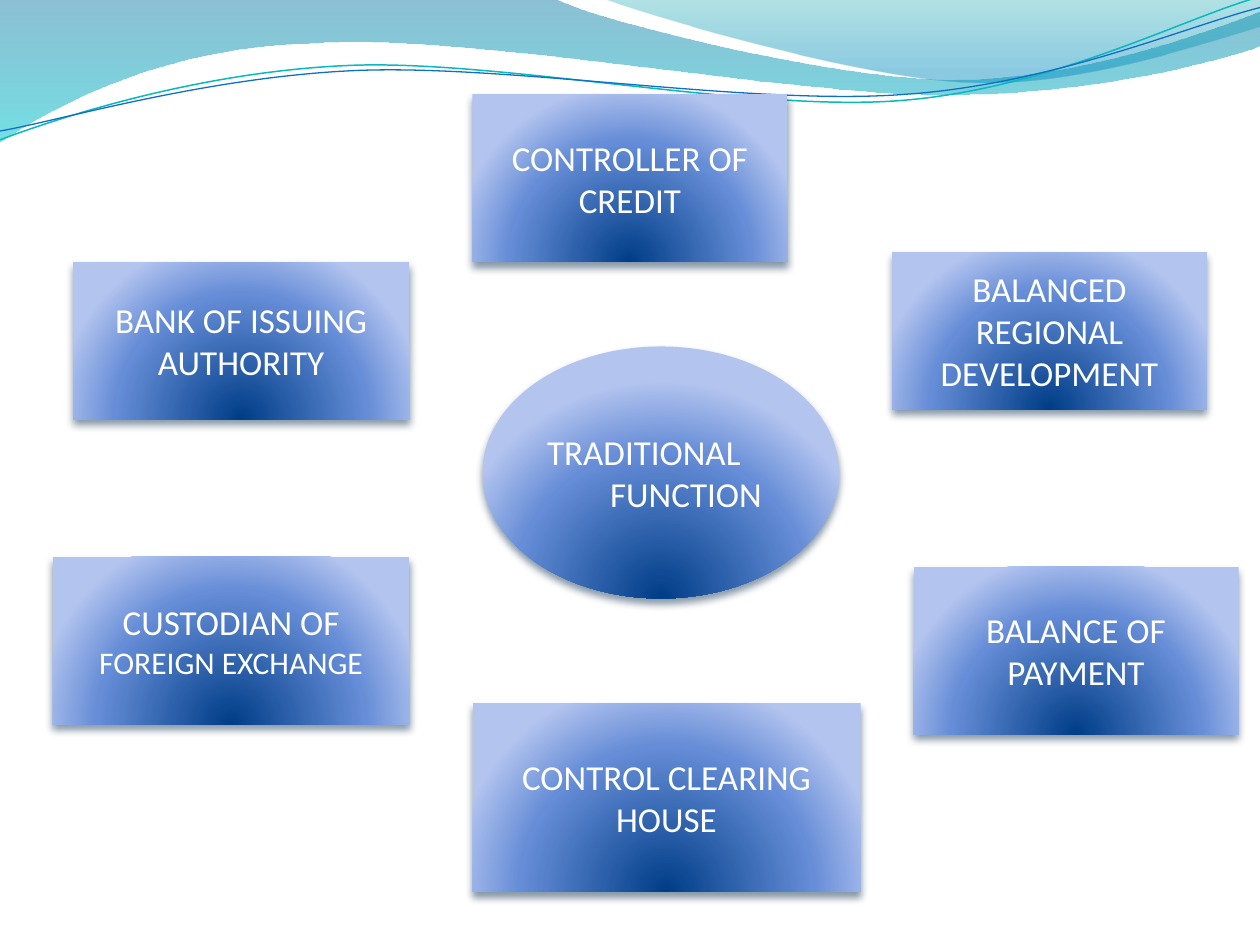
from dataclasses import dataclass

from lxml.etree import SubElement
from pptx import Presentation
from pptx.dml.color import RGBColor
from pptx.enum.shapes import MSO_SHAPE
from pptx.enum.text import MSO_ANCHOR, PP_ALIGN
from pptx.oxml.ns import qn
from pptx.util import Inches, Pt


@dataclass(frozen=True)
class Theme:
    font: str = "Calibri"
    text: str = "FFFFFF"
    size: int = 20
    small_size: int = 18
    # Gradient stops: position, colour, opacity (positions and opacity in percent)
    box: tuple = ((0, "003D87", 100), (68, "668DD7", 100), (100, "B3C4EF", 100))
    wide_wave: tuple = ((0, "0074A1", 45), (100, "00C6CF", 55))
    corner_wave: tuple = ((0, "00A1A9", 30), (80, "008BBF", 45))
    teal_line: str = "0AB8BF"
    blue_line: str = "0F6FC6"
    shadow: str = "042747"


theme = Theme()


def set_gradient(shape, stops, radial=False):
    """Give the shape a radial gradient, or one running from top to bottom."""
    shape.fill.background()
    no_fill = shape.element.spPr.find(qn("a:noFill"))
    gradient = SubElement(shape.element.spPr, qn("a:gradFill"), rotWithShape="1")
    shape.element.spPr.replace(no_fill, gradient)
    stop_list = SubElement(gradient, qn("a:gsLst"))
    for position, color, opacity in stops:
        stop = SubElement(stop_list, qn("a:gs"), pos=str(position * 1000))
        color_element = SubElement(stop, qn("a:srgbClr"), val=color)
        if opacity < 100:
            SubElement(color_element, qn("a:alpha"), val=str(opacity * 1000))
    if radial:
        circle = SubElement(gradient, qn("a:path"), {"path": "circle"})
        SubElement(circle, qn("a:fillToRect"), l="50000", t="130000", r="50000", b="-30000")
    else:
        SubElement(gradient, qn("a:lin"), ang="5400000", scaled="1")


def add_curve(slide, start, segments, closed):
    """Draw segments of one point (line) or three points (Bezier curve)."""
    builder = slide.shapes.build_freeform(Inches(start[0]), Inches(start[1]))
    for segment in segments:
        points = zip(segment[::2], segment[1::2])
        builder.add_line_segments([(Inches(x), Inches(y)) for x, y in points], close=False)
    if closed:
        builder.add_line_segments([], close=True)
    shape = builder.convert_to_shape()
    shape.shadow.inherit = False
    # Merge each run of three line points into one Bezier curve
    outline = shape.element.find(".//" + qn("a:path"))
    steps = iter(outline.findall(qn("a:lnTo")))
    for segment in segments:
        run = [next(steps) for _ in segment[::2]]
        if len(run) == 3:
            curve = SubElement(outline, qn("a:cubicBezTo"))
            outline.replace(run[0], curve)
            for step in run:
                curve.append(step.find(qn("a:pt")))
            for step in run[1:]:
                outline.remove(step)
    return shape


presentation = Presentation()
presentation.slide_width = Inches(10)
presentation.slide_height = Inches(7.5)
slide = presentation.slides.add_slide(presentation.slide_layouts[6])

# Filled waves across the top
waves = [
    (theme.wide_wave, (0, 0), [
        (4.4, -0.01),
        (4.76, 0.17, 6.64, 0.63, 7.58, 0.63),
        (8.53, 0.63, 9.58, 0.26, 10, 0.09),
        (10.01, 0.36),
        (9.83, 0.44, 8.7, 0.76, 7.46, 0.75),
        (6.22, 0.75, 3.82, 0.28, 2.57, 0.34),
        (1.29, 0.36, 0.46, 0.83, -0.01, 1.13),
    ]),
    (theme.corner_wave, (4.79, -0.01), [
        (5.09, 0.11, 6.82, 0.62, 7.69, 0.65),
        (8.56, 0.69, 9.61, 0.32, 10, 0.21),
        (10, 0),
    ]),
]
for stops, start, segments in waves:
    wave = add_curve(slide, start, segments, closed=True)
    set_gradient(wave, stops)
    wave.line.fill.background()

# Thin wave lines
wave_lines = [
    (theme.teal_line, 0.85, (0, 1.11), [
        (0.48, 0.93, 1.58, 0.57, 2.77, 0.52),
        (3.95, 0.47, 5.93, 0.89, 7.13, 0.8),
        (8.33, 0.71, 9.38, 0.15, 9.98, -0.02),
    ]),
    (theme.blue_line, 0.75, (0, 1.04), [
        (0.47, 0.96, 1.64, 0.61, 2.83, 0.56),
        (4.03, 0.51, 5.97, 0.84, 7.17, 0.75),
        (8.36, 0.67, 9.41, 0.21, 10, 0.06),
    ]),
]
for color, width, start, segments in wave_lines:
    wave_line = add_curve(slide, start, segments, closed=False)
    wave_line.fill.background()
    wave_line.line.color.rgb = RGBColor.from_string(color)
    wave_line.line.width = Pt(width)

# Central ellipse and the functions around it: text, left, top, width, height
functions = [
    ("TRADITIONAL\nFUNCTION", 3.83, 2.75, 2.83, 2),
    ("CONTROLLER OF CREDIT", 3.75, 0.75, 2.5, 1.33),
    ("BALANCED REGIONAL DEVELOPMENT", 7.08, 2, 2.5, 1.25),
    ("BALANCE OF PAYMENT", 7.25, 4.5, 2.58, 1.33),
    ("CUSTODIAN OF", 0.42, 4.42, 2.83, 1.33),
    ("BANK OF ISSUING AUTHORITY", 0.58, 2.08, 2.67, 1.25),
    ("CONTROL CLEARING HOUSE", 3.75, 5.58, 3.08, 1.5),
]
shapes = {}
for text, left, top, width, height in functions:
    kind = MSO_SHAPE.RECTANGLE if shapes else MSO_SHAPE.OVAL
    shape = slide.shapes.add_shape(
        kind, Inches(left), Inches(top), Inches(width), Inches(height))
    shapes[text] = shape
    set_gradient(shape, theme.box, radial=True)
    shape.line.fill.background()
    shape.shadow.inherit = False
    effects = shape.element.spPr.find(qn("a:effectLst"))
    shadow = SubElement(effects, qn("a:outerShdw"), blurRad=str(Pt(4.5)),
                        dist=str(Pt(3)), dir="5400000", rotWithShape="0")
    shadow_color = SubElement(shadow, qn("a:srgbClr"), val=theme.shadow)
    SubElement(shadow_color, qn("a:alpha"), val="48000")
    shape.text_frame.text = text
    shape.text_frame.word_wrap = True
    shape.text_frame.vertical_anchor = MSO_ANCHOR.MIDDLE

# The last two words of this box are set smaller
custodian = shapes["CUSTODIAN OF"].text_frame.paragraphs[0]
small_run = custodian.add_run()
small_run.text = " FOREIGN EXCHANGE"

# Text format
for shape in shapes.values():
    for paragraph in shape.text_frame.paragraphs:
        paragraph.alignment = PP_ALIGN.CENTER
        for run in paragraph.runs:
            run.font.name = theme.font
            run.font.size = Pt(theme.size)
            run.font.color.rgb = RGBColor.from_string(theme.text)
small_run.font.size = Pt(theme.small_size)

# The two words in the ellipse are staggered by an indent
first_word, second_word = shapes["TRADITIONAL\nFUNCTION"].text_frame.paragraphs
first_word.alignment = second_word.alignment = PP_ALIGN.LEFT
second_word._p.get_or_add_pPr().set("marL", str(Inches(0.5)))

presentation.save("out.pptx")
